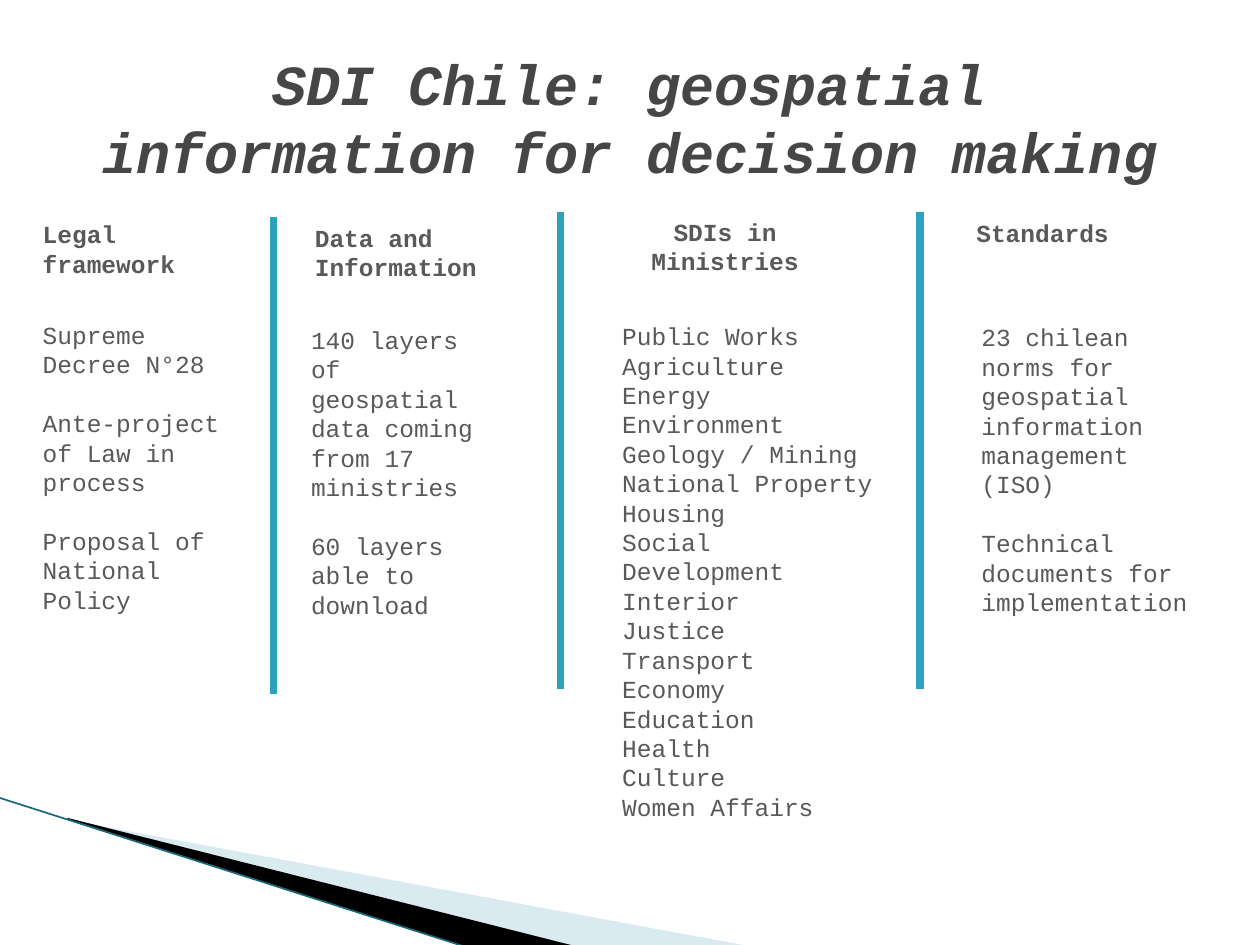
"""Build the slide on geospatial information for decision making in Chile."""
from dataclasses import dataclass

from lxml.etree import SubElement
from pptx import Presentation
from pptx.dml.color import RGBColor
from pptx.enum.shapes import MSO_CONNECTOR as Connector
from pptx.enum.text import MSO_ANCHOR as Anchor, PP_ALIGN as Align
from pptx.oxml.ns import qn
from pptx.slide import Slide
from pptx.util import Inches, Pt

COLOURS = {
    "title": "464646",
    "text": "595959",
    "divider": "2DA2BF",
    "pale": "A0CBDC",
    "dark": "000000",
    "edge": "16697A",
}
FONT = "Courier New"
BODY_FORMAT = {"name": FONT, "size": Pt(14), "bold": False}
HEADING_FORMAT = BODY_FORMAT | {"bold": True}
TITLE_FORMAT = {"name": FONT, "size": Pt(32.4), "bold": True, "italic": True}
PARAGRAPH_GAP = 16.8

Point = tuple[float, float]
Box = tuple[float, float, float, float]


@dataclass
class Column:
    heading: str
    heading_box: Box
    items: list[str]
    items_box: Box
    gap: float = PARAGRAPH_GAP
    heading_align: Align = Align.LEFT


@dataclass
class Line:
    start: Point
    end: Point
    colour: str
    width: float


@dataclass
class Wedge:
    points: list[Point]
    colour: str
    opacity: int = 100


COLUMNS = [
    Column(
        "Legal framework", (0.24, 1.69, 1.69, 0.57),
        ["Supreme Decree N°28", "Ante-project of Law in process",
         "Proposal of National Policy"],
        (0.24, 2.49, 1.69, 2.22),
    ),
    Column(
        "Data and Information", (2.4, 1.72, 1.55, 0.57),
        ["140 layers of geospatial data coming from 17 ministries",
         "60 layers able to download"],
        (2.37, 2.53, 1.69, 1.99),
    ),
    Column(
        "SDIs in Ministries", (4.77, 1.67, 1.97, 0.34),
        ["Public Works", "Agriculture", "Energy", "Environment",
         "Geology / Mining", "National Property", "Housing",
         "Social Development", "Interior", "Justice", "Transport", "Economy",
         "Education", "Health", "Culture", "Women Affairs"],
        (4.84, 2.5, 2.2, 3.87), gap=0, heading_align=Align.CENTER,
    ),
    Column(
        "Standards", (7.65, 1.68, 1.92, 0.34),
        ["23 chilean norms for geospatial information management (ISO)",
         "Technical documents for implementation"],
        (7.69, 2.51, 1.88, 2.46),
    ),
]
WEDGES = [
    Wedge([(0.55, 6.51), (5.95, 7.51), (4.56, 7.51), (0.55, 6.5)], "pale", 40),
    Wedge([(0.53, 6.49), (4.57, 7.51), (3.72, 7.52), (0.54, 6.5)], "dark"),
]
EDGE = Line((-0.01, 6.33), (3.71, 7.52), "edge", 0.95)
DIVIDERS = [
    Line((x, top), (x, top + 3.79), "divider", 4.33)
    for x, top in [(2.17, 1.72), (4.45, 1.68), (7.3, 1.68)]
]


def colour(name: str) -> RGBColor:
    """Return a named colour."""
    return RGBColor.from_string(COLOURS[name])


def add_wedge(slide: Slide, wedge: Wedge) -> None:
    """Draw a filled corner wedge."""
    first, *others = [(Inches(x), Inches(y)) for x, y in wedge.points]
    builder = slide.shapes.build_freeform(*first)
    builder.add_line_segments(others)
    shape = builder.convert_to_shape()
    shape.shadow.inherit = False
    shape.fill.solid()
    shape.fill.fore_color.rgb = colour(wedge.colour)
    shape.line.fill.background()
    if wedge.opacity < 100:
        fill_colour = shape.element.spPr.find(f"{qn('a:solidFill')}/{qn('a:srgbClr')}")
        SubElement(fill_colour, qn("a:alpha"), val=str(wedge.opacity * 1000))


def add_line(slide: Slide, line: Line) -> None:
    """Draw a straight line without a shadow."""
    ends = [Inches(value) for value in line.start + line.end]
    connector = slide.shapes.add_connector(Connector.STRAIGHT, *ends)
    connector.line.color.rgb = colour(line.colour)
    connector.line.width = Pt(line.width)
    SubElement(connector.element.spPr, qn("a:effectLst"))


def add_text(slide: Slide, box: Box, texts: list[str], formats: dict,
             colour_name: str = "text", align: Align = Align.LEFT,
             gap: float = 0, anchor: Anchor = Anchor.TOP) -> None:
    """Write paragraphs in a wrapping text box."""
    shape = slide.shapes.add_textbox(*map(Inches, box))
    frame = shape.text_frame
    frame.word_wrap = True
    frame.vertical_anchor = anchor
    for index, text in enumerate(texts):
        paragraph = frame.add_paragraph() if index else frame.paragraphs[0]
        paragraph.alignment = align
        paragraph.space_before = Pt(gap if index else 0)
        run = paragraph.add_run()
        run.text = text
        for attribute, value in formats.items():
            setattr(run.font, attribute, value)
        run.font.color.rgb = colour(colour_name)


def main() -> None:
    """Build and save the presentation."""
    presentation = Presentation()
    presentation.slide_width = Inches(10)
    presentation.slide_height = Inches(7.5)
    slide = presentation.slides.add_slide(presentation.slide_layouts[6])
    for wedge in WEDGES:
        add_wedge(slide, wedge)
    for line in [EDGE, *DIVIDERS]:
        add_line(slide, line)
    add_text(slide, (0.5, 0.3, 9, 1.25),
             ["SDI Chile: geospatial information for decision making"],
             TITLE_FORMAT, "title", Align.CENTER, anchor=Anchor.MIDDLE)
    for column in COLUMNS:
        add_text(slide, column.heading_box, [column.heading], HEADING_FORMAT,
                 align=column.heading_align)
        add_text(slide, column.items_box, column.items, BODY_FORMAT,
                 gap=column.gap)
    presentation.save("out.pptx")


if __name__ == "__main__":
    main()
